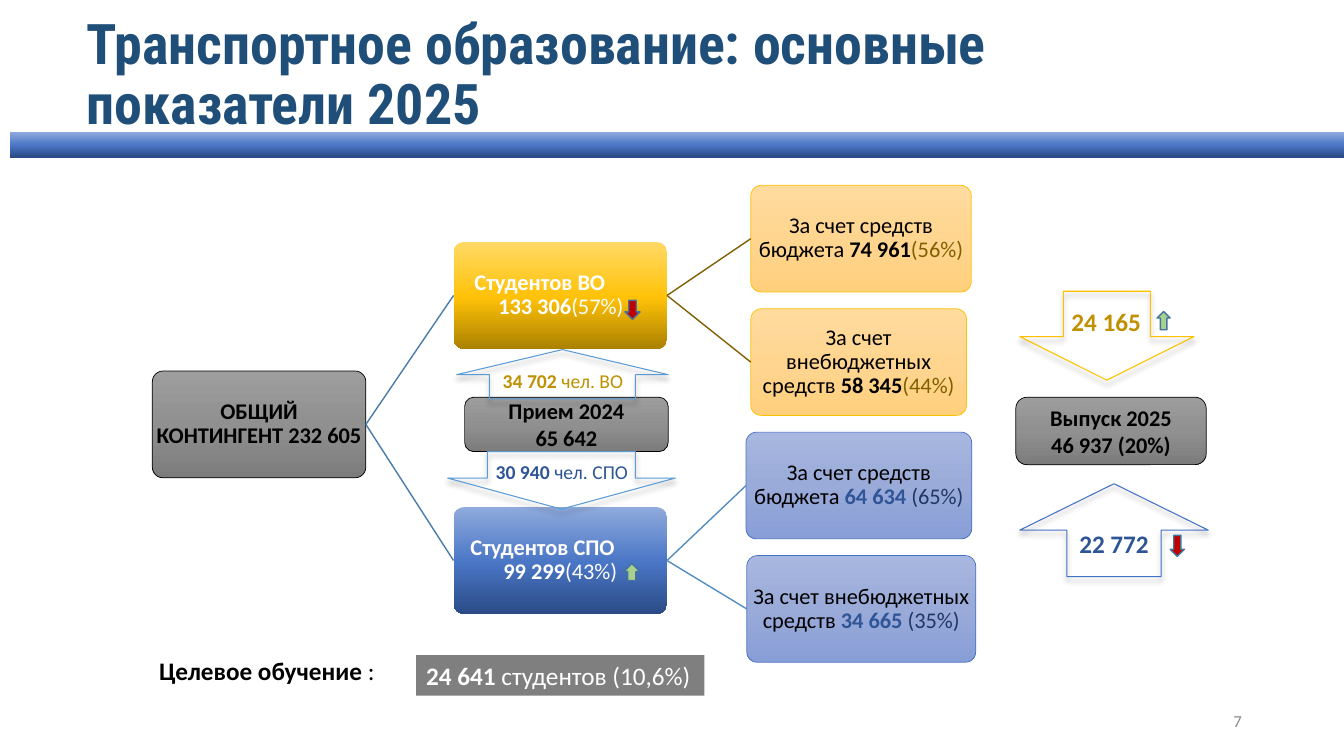
"""Build the slide on transport education figures for 2025."""
from copy import deepcopy
from dataclasses import dataclass
from typing import NamedTuple

from lxml.etree import SubElement
from pptx import Presentation
from pptx.dml.color import RGBColor
from pptx.enum.shapes import MSO_CONNECTOR, MSO_SHAPE
from pptx.enum.text import MSO_ANCHOR, MSO_AUTO_SIZE, PP_ALIGN
from pptx.oxml.ns import qn
from pptx.util import Cm, Pt


@dataclass(frozen=True)
class Theme:
    """Hold the colours, gradients (top to bottom), fonts and type sizes."""
    head: str = "Roboto Condensed"
    body: str = "Calibri"
    title: int = 40
    large: int = 18
    normal: int = 16
    small: int = 14
    tiny: int = 12
    black: str = "000000"
    white: str = "FFFFFF"
    navy: str = "1F4E79"
    blue: str = "2F5597"
    dark: str = "203864"
    royal: str = "4472C4"
    sky: str = "5B9BD5"
    trunk: str = "497CAB"
    twig: str = "538DC1"
    gold: str = "BF9000"
    brown: str = "806000"
    amber: str = "FFC000"
    red: str = "C00000"
    green: str = "A9D18E"
    edge: str = "43739E"
    faint: str = "8C8C8C"
    steel: tuple = ((0, "9D9D9D"), (0.5, "909090"), (1, "7C7C7C"))
    deep: tuple = ((0, "8FAADC"), (0.52, "4A76C6"), (1, "2A4B86"))
    sun: tuple = ((0, "FFD966"), (0.52, "FFC208"), (1, "AB8100"))
    peach: tuple = ((0, "FFDB9E"), (0.5, "FFD590"), (1, "FFD07C"))
    lilac: tuple = ((0, "A8B7DF"), (0.5, "9AABD9"), (1, "889ED7"))


T = Theme()
UP, DOWN = MSO_SHAPE.UP_ARROW, MSO_SHAPE.DOWN_ARROW
ROUND, RECT = MSO_SHAPE.ROUNDED_RECTANGLE, MSO_SHAPE.RECTANGLE
CARD_H, LEAF_TOP, LEAF_STEP = 2.69, 4.67, 3.11


class Span(NamedTuple):
    """Describe one run of text."""
    text: str
    color: str = T.black
    bold: bool = False


class Arrow(NamedTuple):
    """Describe one arrow; box is left, top, width, height in cm."""
    kind: MSO_SHAPE
    box: tuple
    line: str
    fill: str | None = None
    bends: tuple = (0.5, 0.5)


class Label(NamedTuple):
    """Describe one free text box."""
    box: tuple
    spans: list
    size: int
    align: PP_ALIGN = PP_ALIGN.LEFT
    anchor: MSO_ANCHOR = MSO_ANCHOR.TOP


class Leaf(NamedTuple):
    """Describe one funding card."""
    left: float
    width: float
    spans: list


class Branch(NamedTuple):
    """Describe one level of study with its funding cards."""
    top: float
    fill: tuple
    lines: list
    dents: tuple
    tint: tuple
    edge: str
    link: str
    leaves: list


def rgb(code: str) -> RGBColor:
    """Turn a hex code into a colour."""
    return RGBColor.from_string(code)


def put_text(shape, lines, *, size, font=T.body, align=PP_ALIGN.CENTER,
             anchor=MSO_ANCHOR.MIDDLE, space=None, inset=None, dents=(), wrap=True):
    """Fill a shape with lines of spans."""
    frame = shape.text_frame
    frame.word_wrap = wrap
    frame.auto_size = MSO_AUTO_SIZE.NONE
    frame.vertical_anchor = anchor
    if inset is not None:
        frame.margin_left = frame.margin_right = Cm(inset)
        frame.margin_top = frame.margin_bottom = Cm(inset)
    for i, spans in enumerate(lines):
        para = frame.add_paragraph() if i else frame.paragraphs[0]
        para.alignment = align
        if space:
            para.line_spacing = space
        if dents:
            para._p.get_or_add_pPr().set("marL", str(Cm(dents[i])))
        for span in spans:
            run = para.add_run()
            run.text = span.text
            run.font.name, run.font.size = font, Pt(size)
            run.font.bold, run.font.color.rgb = span.bold, rgb(span.color)


def blend(shape, stops: tuple) -> None:
    """Give a shape a three-stop gradient from top to bottom."""
    shape.fill.gradient()
    shape.fill.gradient_angle = 270
    group = shape._element.spPr.find(qn("a:gradFill")).find(qn("a:gsLst"))
    group.append(deepcopy(group[-1]))
    for stop, (place, color) in zip(shape.fill.gradient_stops, stops):
        stop.position, stop.color.rgb = place, rgb(color)


def draw(slide, kind, box: tuple, fill=None, line=None, width=0.5, bends=()):
    """Add a preset shape with a plain, blended or empty fill."""
    shape = slide.shapes.add_shape(kind, *map(Cm, box))
    shape.shadow.inherit = False
    if isinstance(fill, tuple):
        blend(shape, fill)
    elif fill:
        shape.fill.solid()
        shape.fill.fore_color.rgb = rgb(fill)
    else:
        shape.fill.background()
    if line:
        shape.line.color.rgb, shape.line.width = rgb(line), Pt(width)
    else:
        shape.line.fill.background()
    for i, bend in enumerate(bends):
        shape.adjustments[i] = bend
    return shape


def join(slide, start, end, color: str) -> None:
    """Link the right side of one card to the left side of another."""
    link = slide.shapes.add_connector(MSO_CONNECTOR.STRAIGHT, 0, 0, 0, 0)
    link.begin_connect(start, 3)
    link.end_connect(end, 1)
    link.line.color.rgb, link.line.width = rgb(color), Pt(1)
    SubElement(link._element.spPr, qn("a:effectLst"))


def card(slide, box: tuple, fill: tuple, line, lines: list, **form):
    """Add a rounded card of the tree."""
    shape = draw(slide, ROUND, box, fill, line, bends=(0.1,))
    put_text(shape, lines, size=T.normal, space=0.9, inset=0.03, **form)
    return shape


def point(slide, arrow: Arrow) -> None:
    """Add an arrow; an unfilled one casts a soft shadow."""
    shape = draw(slide, arrow.kind, arrow.box, arrow.fill, arrow.line,
                 1 if arrow.fill else 0.75, arrow.bends)
    if not arrow.fill:
        glow = shape._element.spPr.find(qn("a:effectLst"))
        cast = SubElement(glow, qn("a:outerShdw"), blurRad=str(Pt(4)),
                          dist=str(Pt(3)), dir="5400000", rotWithShape="0")
        shade = SubElement(cast, qn("a:srgbClr"), val=T.black)
        SubElement(shade, qn("a:alpha"), val="40000")


BUDGET, EXTRA = "За счет средств бюджета ", "За счет внебюджетных средств "
BRANCHES = [
    Branch(6.1, T.sun, [[Span("Студентов ВО", T.white, True)],
                        [Span("133 306", T.white, True), Span("(57%)", T.white)]],
           (0.42, 1.02), T.peach, T.amber, T.brown, [
        Leaf(18.92, 5.56, [Span(BUDGET), Span("74 961", bold=True), Span("(56%)", T.brown)]),
        Leaf(18.92, 5.44, [Span(EXTRA), Span("58 345", bold=True), Span("(44%)", T.brown)])]),
    Branch(12.78, T.deep, [[Span("Студентов СПО", T.white, True)],
                           [Span("99 299", T.white, True), Span("(43%)", T.white)]],
           (0.32, 1.15), T.lilac, T.royal, T.twig, [
        Leaf(18.8, 5.69, [Span(BUDGET), Span("64 634 ", T.blue, True), Span("(65%)", T.dark)]),
        Leaf(18.82, 5.77, [Span(EXTRA), Span("34 665 ", T.blue, True), Span("(35%)", T.dark)])]),
]
TOTALS = [((11.71, 10.01, 5.13, 1.37), ("Прием 2024", "65 642")),
          ((25.6, 10.01, 4.8, 1.7), ("Выпуск 2025", "46 937 (20%)"))]
LABELS = [
    Label((12.42, 9.17, 3.56, 0.86), [Span("34 702 ", T.gold, True), Span("чел. ВО", T.gold)], T.small),
    Label((12.24, 11.46, 3.89, 0.86), [Span("30 940 ", T.blue, True), Span("чел. СПО", T.blue)], T.small),
    Label((26.95, 13.18, 2.29, 1.02), [Span("22 772", T.blue, True)], T.large),
    Label((26.75, 7.59, 2.41, 1.02), [Span("24 165", T.gold, True)], T.large),
    Label((3.76, 16.38, 5.99, 1.02), [Span("Целевое обучение ", bold=True), Span(":")], T.large),
    Label((23.93, 17.65, 7.62, 1.02), [Span("7", T.faint)], T.tiny, PP_ALIGN.RIGHT, MSO_ANCHOR.MIDDLE),
]
ARROWS = [
    Arrow(UP, (11.51, 8.81, 5.33, 1.24), T.sky, bends=(0.69, 0.51)),
    Arrow(DOWN, (11.28, 11.38, 5.74, 1.45), T.sky, bends=(0.65, 0.54)),
    Arrow(DOWN, (25.7, 7.34, 4.39, 2.24), T.amber, bends=(0.5, 0.49)),
    Arrow(UP, (25.7, 12.19, 4.75, 2.34), T.royal),
    Arrow(DOWN, (15.75, 7.57, 0.38, 0.48), T.edge, T.red),
    Arrow(DOWN, (29.49, 13.49, 0.36, 0.53), T.edge, T.red),
    Arrow(UP, (15.72, 14.2, 0.41, 0.43), T.edge, T.green),
    Arrow(UP, (29.16, 7.85, 0.33, 0.46), T.edge, T.green),
]


def tree(slide) -> None:
    """Draw the tree of students by level and funding."""
    root = card(slide, (3.84, 9.35, 5.38, CARD_H), T.steel, T.black,
                [[Span("ОБЩИЙ КОНТИНГЕНТ 232 605", bold=True)]])
    row = 0
    for branch in BRANCHES:
        node = card(slide, (11.43, branch.top, 5.38, CARD_H), branch.fill, None,
                    branch.lines, align=PP_ALIGN.LEFT, dents=branch.dents)
        join(slide, root, node, T.trunk)
        for leaf in branch.leaves:
            box = (leaf.left, LEAF_TOP + row * LEAF_STEP, leaf.width, CARD_H)
            join(slide, node, card(slide, box, branch.tint, branch.edge, [leaf.spans]), branch.link)
            row += 1


def main() -> None:
    """Build and save the slide."""
    deck = Presentation()
    deck.slide_width, deck.slide_height = Cm(33.87), Cm(19.05)
    slide = deck.slides.add_slide(deck.slide_layouts[5])
    title = slide.shapes.title
    title.left, title.top, title.width, title.height = map(Cm, (1.93, 0.08, 29.21, 3.68))
    put_text(title, [[Span("Транспортное образование: основные показатели 2025", T.navy, True)]],
             size=T.title, font=T.head, align=PP_ALIGN.LEFT, space=0.9)
    tree(slide)
    for box, words in TOTALS:
        put_text(draw(slide, ROUND, box, T.steel, T.black),
                 [[Span(word, bold=True)] for word in words], size=T.normal)
    for label in LABELS:
        put_text(slide.shapes.add_textbox(*map(Cm, label.box)), [label.spans],
                 size=label.size, align=label.align, anchor=label.anchor)
    target = draw(slide, RECT, (10.49, 16.51, 7.26, 1.02), T.black)
    tone = target._element.spPr.find(qn("a:solidFill"))[0]
    SubElement(tone, qn("a:alpha"), val="50000")
    put_text(target, [[Span("24 641 ", T.white, True), Span("студентов (10,6%)", T.white)]],
             size=T.large, align=PP_ALIGN.LEFT, anchor=MSO_ANCHOR.TOP, wrap=False)
    draw(slide, RECT, (0.25, 3.33, 33.62, 0.63), T.deep)
    for arrow in ARROWS:
        point(slide, arrow)
    deck.save("out.pptx")


if __name__ == "__main__":
    main()
